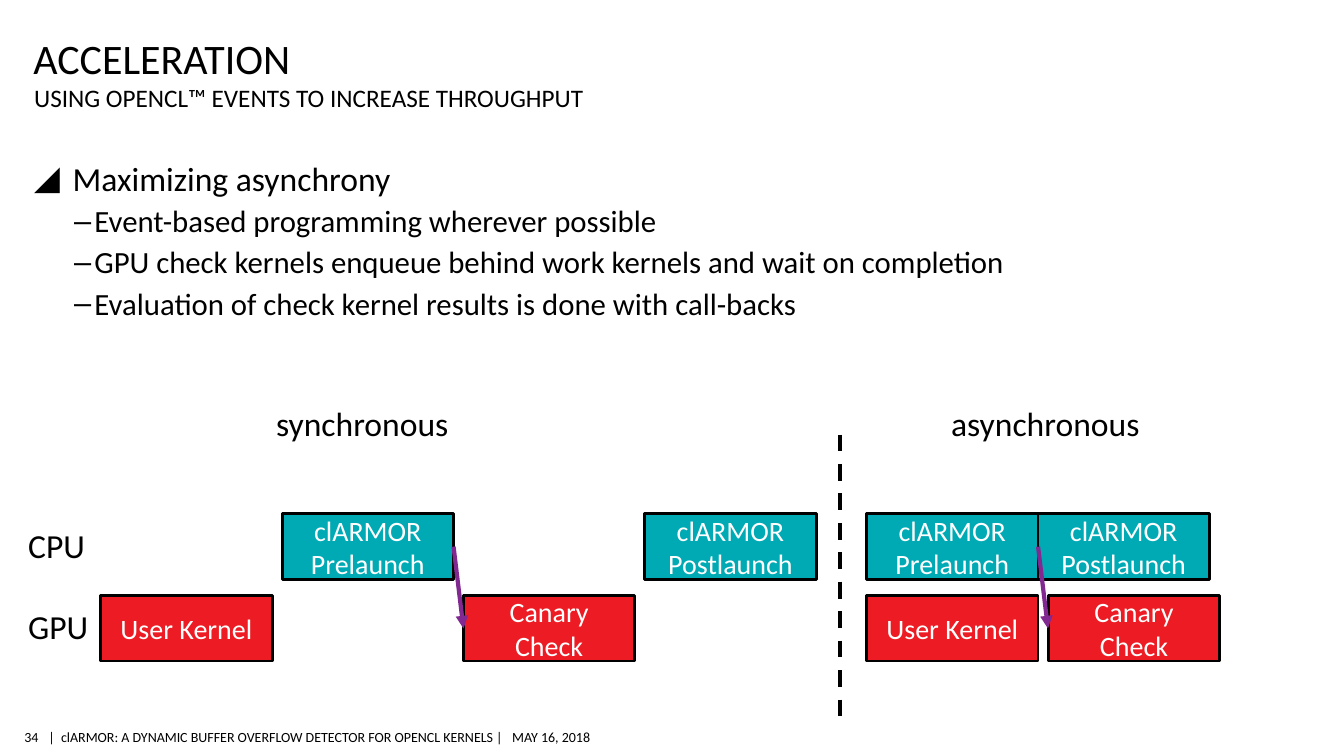
import pptx
import pptx.util
import pptx.dml.color
import pptx.enum.dml
import pptx.enum.shapes
import pptx.enum.text
import pptx.oxml
import pptx.oxml.ns

Cm = pptx.util.Cm
Pt = pptx.util.Pt
ANCHOR = pptx.enum.text.MSO_ANCHOR
ALIGN = pptx.enum.text.PP_ALIGN
COLORS = {
    "black": "000000",
    "white": "FFFFFF",
    "cpu": "00AAB5",
    "gpu": "ED1C24",
    "arrow": "812990",
}
RGB = {name: pptx.dml.color.RGBColor.from_string(value) for name, value in COLORS.items()}


def write_text(shape, lines, size, color="black", align=ALIGN.LEFT, **frame_format):
    frame = shape.text_frame
    frame.text = "\n".join(lines)
    settings = {"word_wrap": True, "auto_size": pptx.enum.text.MSO_AUTO_SIZE.NONE}
    for name, value in (settings | frame_format).items():
        setattr(frame, name, value)
    for paragraph in frame.paragraphs:
        paragraph.alignment = align
        paragraph.space_before = Pt(0)
        font = paragraph.runs[0].font
        for name, value in {"name": "Calibri", "size": Pt(size), "bold": False}.items():
            setattr(font, name, value)
        font.color.rgb = RGB[color]


def add_line(start, end, color, dash=None, arrow=False):
    points = [Cm(value) for value in (*start, *end)]
    connector = slide.shapes.add_connector(pptx.enum.shapes.MSO_CONNECTOR.STRAIGHT, *points)
    connector.line.color.rgb = RGB[color]
    connector.line.width = Pt(3)
    connector.line.dash_style = dash
    properties = connector._element.spPr
    pptx.oxml.ns.qn("a:effectLst")
    properties.append(pptx.oxml.parse_xml(f"<a:effectLst {NAMESPACE}/>"))
    if arrow:
        tail = pptx.oxml.parse_xml(f'<a:tailEnd {NAMESPACE} type="triangle"/>')
        connector.line._get_or_add_ln().append(tail)


NAMESPACE = pptx.oxml.ns.nsdecls("a")
presentation = pptx.Presentation()
presentation.slide_width = Cm(33.87)
presentation.slide_height = Cm(19.05)
slide = presentation.slides.add_slide(presentation.slide_layouts[3])
title, body, subtitle = slide.placeholders

positions = [
    (title, (0.84, 0.76, 28.96, 1.32)),
    (body, (0.86, 3.84, 31.5, 13.72)),
    (subtitle, (0.86, 2.08, 28.96, 0.79)),
]
for placeholder, position in positions:
    for name, value in zip(("left", "top", "width", "height"), position):
        setattr(placeholder, name, Cm(value))

no_sides = {"margin_left": 0, "margin_right": 0}
write_text(title, ["ACCELERATION"], 30, vertical_anchor=ANCHOR.BOTTOM, margin_bottom=0, **no_sides)
write_text(subtitle, ["USING OPENCL™ EVENTS TO INCREASE THROUGHPUT"], 18,
           margin_top=0, margin_bottom=0, **no_sides)
write_text(body, [
    "Maximizing asynchrony",
    "Event-based programming wherever possible",
    "GPU check kernels enqueue behind work kernels and wait on completion",
    "Evaluation of check kernel results is done with call-backs",
], 22, **no_sides)

heading, *details = body.text_frame.paragraphs
heading.runs[0].font.size = Pt(24)
for paragraph in details:
    paragraph.level = 1
    paragraph.space_before = Pt(3)

bullets = [(heading, "◢", 0.97, 0.97)] + [(paragraph, "‒", 1.52, 0.51) for paragraph in details]
for paragraph, character, margin, hanging in bullets:
    properties = paragraph._p.get_or_add_pPr()
    properties.set("marL", str(Cm(margin)))
    properties.set("indent", str(-Cm(hanging)))
    for xml in (
        f'<a:buClr {NAMESPACE}><a:srgbClr val="{COLORS["black"]}"/></a:buClr>',
        f'<a:buChar {NAMESPACE} char="{character}"/>',
    ):
        properties.append(pptx.oxml.parse_xml(xml))

properties = subtitle.text_frame.paragraphs[0]._p.get_or_add_pPr()
properties.set("marL", "0")
properties.set("indent", "0")
properties.append(pptx.oxml.parse_xml(f"<a:buNone {NAMESPACE}/>"))

row_tops = {"cpu": 12.95, "gpu": 15.01}
box_width, box_height = 4.32, 1.65
sync_left, sync_step = 2.54, 4.57
async_left = 21.84
tasks = [
    ("User Kernel", "gpu", sync_left),
    ("clARMOR Prelaunch", "cpu", sync_left + sync_step),
    ("Canary Check", "gpu", sync_left + 2 * sync_step),
    ("clARMOR Postlaunch", "cpu", sync_left + 3 * sync_step),
    ("clARMOR Postlaunch", "cpu", async_left + box_width),
    ("clARMOR Prelaunch", "cpu", async_left),
    ("User Kernel", "gpu", async_left),
    ("Canary Check", "gpu", async_left + 4.58),
]
for label, processor, left in tasks:
    box = slide.shapes.add_shape(
        pptx.enum.shapes.MSO_SHAPE.RECTANGLE,
        Cm(left), Cm(row_tops[processor]), Cm(box_width), Cm(box_height))
    box.shadow.inherit = False
    box.fill.solid()
    box.fill.fore_color.rgb = RGB[processor]
    box.line.color.rgb = RGB["black"]
    box.line.width = Pt(2)
    write_text(box, [label], 20, "white", ALIGN.CENTER, vertical_anchor=ANCHOR.MIDDLE)

for prelaunch_left in (sync_left + sync_step, async_left):
    right = prelaunch_left + box_width
    middles = [top + box_height / 2 for top in row_tops.values()]
    add_line((right, middles[0]), (right + 0.25, middles[1]), "arrow", arrow=True)
add_line((21.16, 10.95), (21.16, 18.08), "black", dash=pptx.enum.dml.MSO_LINE.DASH)

footer_format = {"vertical_anchor": ANCHOR.MIDDLE, "margin_top": Cm(0.1), "margin_bottom": Cm(0.1), **no_sides}
footer = "|  clARMOR: A DYNAMIC BUFFER OVERFLOW DETECTOR FOR OPENCL KERNELS |   MAY 16, 2018"
text_boxes = [
    ("synchronous", (6.71, 10.03, 4.85, 1.27), 24, {}),
    ("asynchronous", (23.72, 10.03, 5.31, 1.27), 24, {}),
    ("CPU", (0.46, 13.11, 2.59, 1.27), 24, {}),
    ("GPU", (0.46, 15.14, 2.59, 1.27), 24, {}),
    ("34", (0.56, 18.24, 0.41, 0.66), 10, footer_format | {"word_wrap": False, "align": ALIGN.RIGHT}),
    (footer, (1.22, 18.24, 13.97, 0.66), 10, footer_format | {"word_wrap": False}),
]
for text, position, size, text_format in text_boxes:
    text_box = slide.shapes.add_textbox(*[Cm(value) for value in position])
    write_text(text_box, [text], size, **text_format)

presentation.save("out.pptx")
